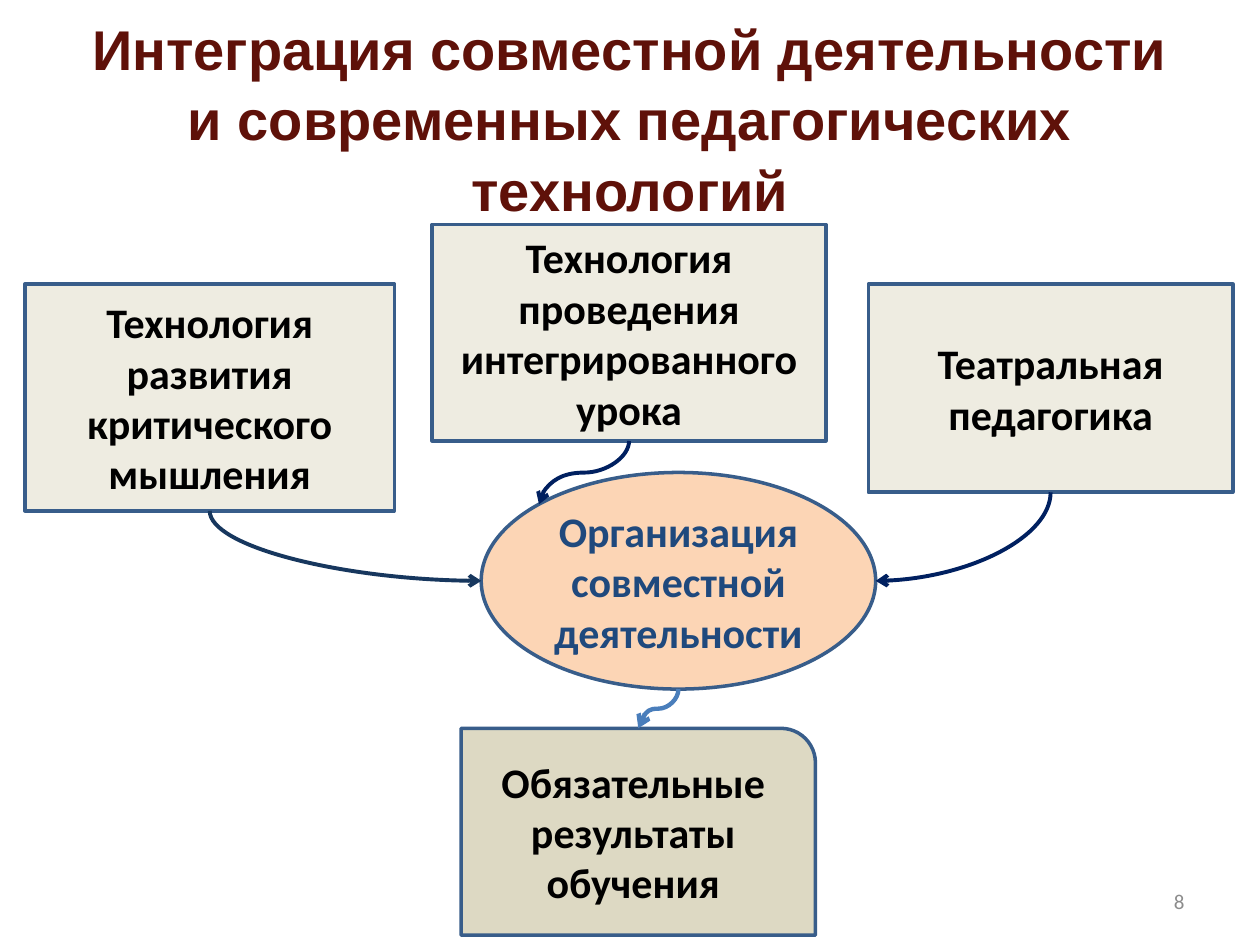
import math
from dataclasses import dataclass
from typing import NamedTuple

import lxml.etree
import pptx
import pptx.dml.color
import pptx.enum.shapes
import pptx.enum.text
import pptx.oxml.ns
import pptx.presentation
import pptx.slide
import pptx.text.text
import pptx.util

SHAPES = pptx.enum.shapes.MSO_SHAPE
ALIGN = pptx.enum.text.PP_ALIGN


@dataclass(frozen=True)
class Theme:
    heading_font: str = "Arial"
    body_font: str = "Calibri"
    title_size: float = 32
    box_size: float = 24
    number_size: float = 12
    outline_width: float = 2
    title: str = "5F1109"
    number: str = "8C8C8C"
    text: str = "000000"
    center_text: str = "1F497D"
    outline: str = "385D8A"
    technology_fill: str = "EEECE1"
    center_fill: str = "FCD5B5"
    result_fill: str = "DDD9C3"
    navy: str = "002060"
    dark_blue: str = "17375E"
    blue: str = "4A7EBB"


THEME = Theme()


class Point(NamedTuple):
    x: float
    y: float


@dataclass(frozen=True)
class Box:
    left: float
    top: float
    width: float
    height: float
    lines: tuple[str, ...]
    fill: str = THEME.technology_fill
    preset: SHAPES = SHAPES.RECTANGLE
    color: str = THEME.text

    def at(self, across: float, down: float) -> Point:
        return Point(self.left + across * self.width, self.top + down * self.height)


@dataclass(frozen=True)
class Arrow:
    start: Point
    end: Point
    color: str
    preset: str
    width: float = 2.25


def rgb(color: str) -> pptx.dml.color.RGBColor:
    return pptx.dml.color.RGBColor.from_string(color)


def write_text(frame: pptx.text.text.TextFrame, lines: tuple[str, ...], font: str,
               size: float, color: str, bold: bool = True,
               alignment: ALIGN = ALIGN.CENTER, spacing: float = 1.0) -> None:
    frame.word_wrap = True
    frame.vertical_anchor = pptx.enum.text.MSO_ANCHOR.MIDDLE
    frame.text = "\n".join(lines)
    for paragraph in frame.paragraphs:
        paragraph.alignment = alignment
        paragraph.line_spacing = spacing
        paragraph.font.name = font
        paragraph.font.size = pptx.util.Pt(size)
        paragraph.font.bold = bold
        paragraph.font.color.rgb = rgb(color)


def draw_box(slide: pptx.slide.Slide, box: Box) -> None:
    bounds = map(pptx.util.Pt, (box.left, box.top, box.width, box.height))
    shape = slide.shapes.add_shape(box.preset, *bounds)
    shape.shadow.inherit = False
    shape.fill.solid()
    shape.fill.fore_color.rgb = rgb(box.fill)
    shape.line.color.rgb = rgb(THEME.outline)
    shape.line.width = pptx.util.Pt(THEME.outline_width)
    write_text(shape.text_frame, box.lines, THEME.body_font, THEME.box_size, box.color)


def draw_arrow(slide: pptx.slide.Slide, arrow: Arrow) -> None:
    across = arrow.end.x - arrow.start.x
    width, height = arrow.end.y - arrow.start.y, abs(across)
    left = (arrow.start.x + arrow.end.x - width) / 2
    top = (arrow.start.y + arrow.end.y - height) / 2
    corners = map(pptx.util.Pt, (left, top, left + width, top + height))
    connector = slide.shapes.add_connector(pptx.enum.shapes.MSO_CONNECTOR.CURVE, *corners)
    connector.line.color.rgb = rgb(arrow.color)
    connector.line.width = pptx.util.Pt(arrow.width)

    qualified = pptx.oxml.ns.qn
    properties = connector.element.spPr
    properties.find(qualified("a:prstGeom")).set("prst", arrow.preset)
    transform = properties.find(qualified("a:xfrm"))
    transform.set("rot", str((90 if across < 0 else 270) * 60000))
    if across > 0:
        transform.set("flipH", "1")
    line = properties.find(qualified("a:ln"))
    lxml.etree.SubElement(line, qualified("a:tailEnd"), type="arrow")
    lxml.etree.SubElement(properties, qualified("a:effectLst"))


def main() -> None:
    presentation = pptx.Presentation()
    presentation.slide_width = pptx.util.Pt(720)
    presentation.slide_height = pptx.util.Pt(540)
    slide = presentation.slides.add_slide(presentation.slide_layouts[6])

    center = Box(275, 270, 225.4, 123.8, ("Организация совместной деятельности",),
                 THEME.center_fill, SHAPES.OVAL, THEME.center_text)
    critical = Box(14.2, 162.3, 211.2, 129.6,
                   ("Технология развития критического мышления",))
    integrated = Box(247, 128.2, 224.9, 123.8,
                     ("Технология проведения", "интегрированного", "урока"))
    theatre = Box(496.2, 162.3, 208.3, 119, ("Театральная педагогика",))
    result = Box(263.5, 416.2, 202.5, 118.2, ("Обязательные результаты обучения",),
                 THEME.result_fill, SHAPES.ROUND_1_RECTANGLE)
    diagonal = (1 - math.sqrt(0.5)) / 2

    for box in (center, critical, integrated, theatre, result):
        draw_box(slide, box)
    for arrow in (
        Arrow(integrated.at(0.5, 1), center.at(diagonal, diagonal), THEME.navy, "curvedConnector3"),
        Arrow(critical.at(0.5, 1), center.at(0, 0.5), THEME.dark_blue, "curvedConnector2"),
        Arrow(theatre.at(0.5, 1), center.at(1, 0.5), THEME.navy, "curvedConnector2"),
        Arrow(center.at(0.5, 1), result.at(0.5, 0), THEME.blue, "curvedConnector3", 2.5),
    ):
        draw_arrow(slide, arrow)

    title = slide.shapes.add_textbox(*map(pptx.util.Pt, (36, 21.6, 648, 90)))
    write_text(title.text_frame,
               ("Интеграция совместной деятельности и современных педагогических технологий",),
               THEME.heading_font, THEME.title_size, THEME.title, spacing=1.05)
    number = slide.shapes.add_textbox(*map(pptx.util.Pt, (516, 500.5, 168, 28.8)))
    write_text(number.text_frame, ("8",), THEME.body_font, THEME.number_size,
               THEME.number, bold=False, alignment=ALIGN.RIGHT)
    presentation.save("out.pptx")


if __name__ == "__main__":
    main()
